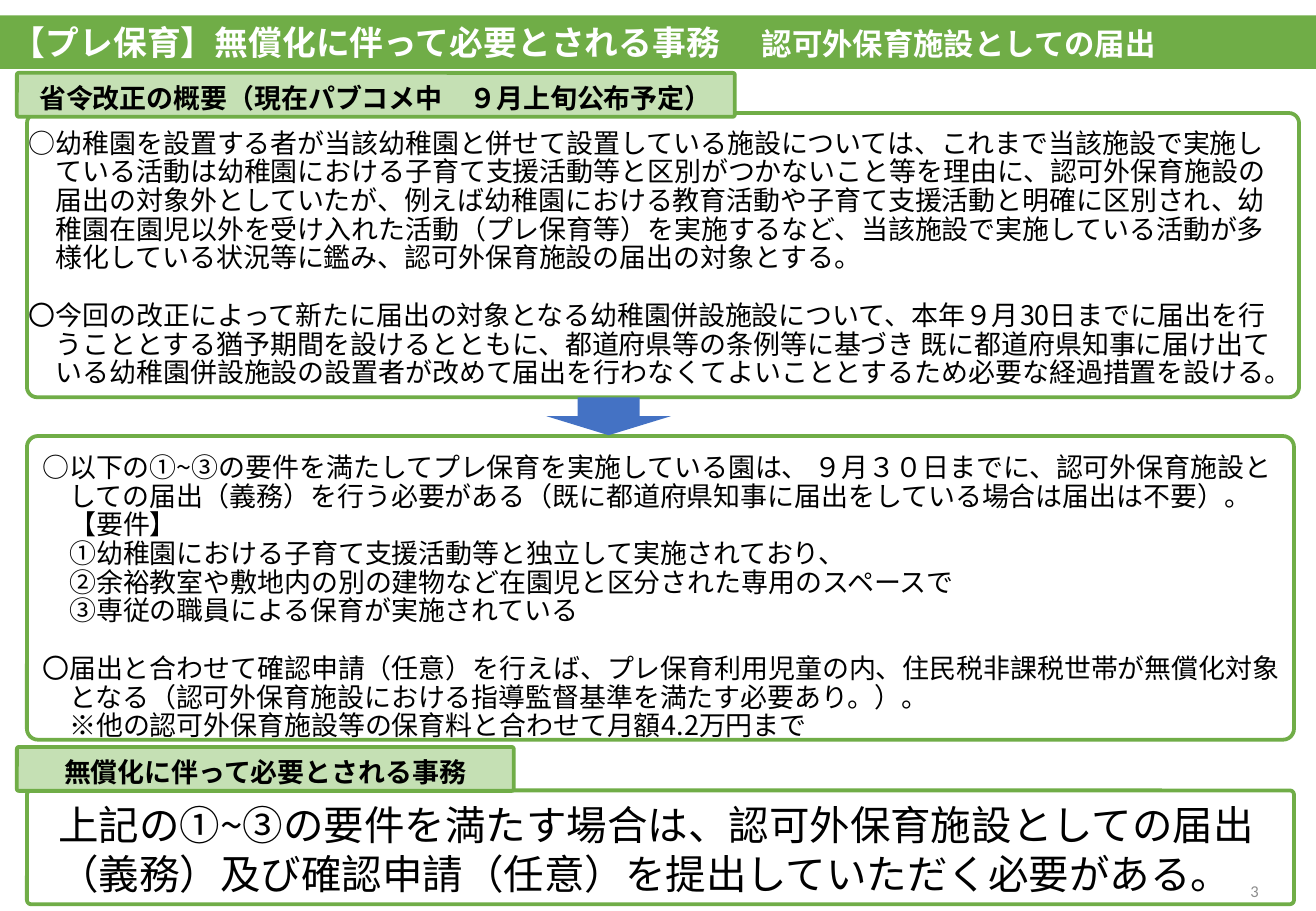
from lxml import etree
from pptx import Presentation
from pptx.dml.color import RGBColor
from pptx.enum.shapes import MSO_SHAPE
from pptx.enum.text import MSO_ANCHOR, PP_ALIGN
from pptx.oxml.ns import qn
from pptx.util import Pt

RECT, ROUND, ARROW = MSO_SHAPE.RECTANGLE, MSO_SHAPE.ROUNDED_RECTANGLE, MSO_SHAPE.DOWN_ARROW
TOP, MIDDLE = MSO_ANCHOR.TOP, MSO_ANCHOR.MIDDLE
LEFT, CENTER, RIGHT = PP_ALIGN.LEFT, PP_ALIGN.CENTER, PP_ALIGN.RIGHT

COLORS = {"green": "70AD47", "pale": "C5E0B4", "blue": "4472C4",
          "white": "FFFFFF", "black": "000000", "gray": "8C8C8C"}
FONT, NUMBER_FONT = "Noto Sans CJK JP", "Calibri"
BODY_SIZE, BODY_PITCH = 16, 17

# Content: each item is a list of lines
TITLE = [("【プレ保育】無償化に伴って必要とされる事務 　", 20), ("認可外保育施設としての届出", 18)]
REVISION = [
    ["○幼稚園を設置する者が当該幼稚園と併せて設置している施設については、これまで当該施設で実施し",
     "ている活動は幼稚園における子育て支援活動等と区別がつかないこと等を理由に、認可外保育施設の",
     "届出の対象外としていたが、例えば幼稚園における教育活動や子育て支援活動と明確に区別され、幼",
     "稚園在園児以外を受け入れた活動（プレ保育等）を実施するなど、当該施設で実施している活動が多",
     "様化している状況等に鑑み、認可外保育施設の届出の対象とする。"],
    ["〇今回の改正によって新たに届出の対象となる幼稚園併設施設について、本年９月30日までに届出を行",
     "うこととする猶予期間を設けるとともに、都道府県等の条例等に基づき 既に都道府県知事に届け出て",
     "いる幼稚園併設施設の設置者が改めて届出を行わなくてよいこととするため必要な経過措置を設ける。"],
]
REQUIREMENTS = [
    ["○以下の①~③の要件を満たしてプレ保育を実施している園は、 ９月３０日までに、認可外保育施設と",
     "しての届出（義務）を行う必要がある（既に都道府県知事に届出をしている場合は届出は不要）。",
     "【要件】",
     "①幼稚園における子育て支援活動等と独立して実施されており、",
     "②余裕教室や敷地内の別の建物など在園児と区分された専用のスペースで",
     "③専従の職員による保育が実施されている"],
    ["〇届出と合わせて確認申請（任意）を行えば、プレ保育利用児童の内、住民税非課税世帯が無償化対象",
     "となる（認可外保育施設における指導監督基準を満たす必要あり。）。",
     "※他の認可外保育施設等の保育料と合わせて月額4.2万円まで"],
]
CONCLUSION = "上記の①~③の要件を満たす場合は、認可外保育施設としての届出（義務）及び確認申請（任意）を提出していただく必要がある。"

# Places in points: left, top, width, height
REVISION_FRAME = (16, 67, 754, 168.5)
REQUIREMENTS_FRAME = (16, 258.5, 751, 180)
CONCLUSION_FRAME = (16, 468.5, 751, 67.5)
HEADINGS = [("省令改正の概要（現在パブコメ中　９月上旬公布予定）", (10, 43.2, 425.5, 26)),
            ("無償化に伴って必要とされる事務", (10, 442.8, 294.5, 26))]
BODIES = [(REVISION, (10, 73.5, 769, 196.5)), (REQUIREMENTS, (18, 265.7, 759, 179.3))]

prs = Presentation()
prs.slide_width, prs.slide_height = Pt(780), Pt(540)
s = prs.slides.add_slide(prs.slide_layouts[6])


def rgb(name):
    return RGBColor.from_string(COLORS[name])


def add_box(kind, place, fill=None, line=None, adj=None):
    sp = s.shapes.add_shape(kind, *map(Pt, place))
    sp.shadow.inherit = False
    if adj is not None:
        sp.adjustments[0] = adj
    if fill:
        sp.fill.solid()
        sp.fill.fore_color.rgb = rgb(fill)
    else:
        sp.fill.background()
    if line:
        sp.line.color.rgb = rgb(line)
        sp.line.width = Pt(2.25)
    else:
        sp.line.fill.background()
    return sp


def add_textbox(place):
    return s.shapes.add_textbox(*map(Pt, place))


def write(sp, text, size=BODY_SIZE, color="black", font=FONT, bold=False,
          align=LEFT, anchor=TOP, pitch=None, hanging=0):
    """Text is a string, (text, size) runs, or items made of lists of lines."""
    tf = sp.text_frame
    tf.word_wrap = True
    tf.vertical_anchor = anchor
    items = [[text]] if isinstance(text, str) else text
    for i, item in enumerate(items):
        p = tf.paragraphs[0] if i == 0 else tf.add_paragraph()
        p.alignment = align
        if pitch:
            p.line_spacing = Pt(pitch)
            p.space_before = Pt(pitch if i else 0)
        if hanging:
            pPr = p._p.get_or_add_pPr()
            pPr.set("marL", str(Pt(hanging)))
            pPr.set("indent", str(-Pt(hanging)))
        for j, part in enumerate(item):
            run_text, run_size = part if isinstance(part, tuple) else (part, size)
            if j and not isinstance(part, tuple):
                p.add_line_break()
            r = p.add_run()
            r.text = run_text
            r.font.size, r.font.bold = Pt(run_size), bold
            r.font.color.rgb = rgb(color)
            r.font.name = font
            etree.SubElement(r._r.get_or_add_rPr(), qn("a:ea")).set("typeface", font)


# Title bar
bar = add_box(RECT, (0, 9.2, 780, 31.7), fill="green")
write(bar, [TITLE], color="white", bold=True, anchor=MIDDLE)

# Frames and the arrow between the first two
for frame in (REVISION_FRAME, REQUIREMENTS_FRAME, CONCLUSION_FRAME):
    add_box(ROUND, frame, line="green", adj=0.036)
arrow_top = REVISION_FRAME[1] + REVISION_FRAME[3]
add_box(ARROW, (324, arrow_top, 73.5, 22.5), fill="blue")

# Section headings
for heading, place in HEADINGS:
    sp = add_box(ROUND, place, fill="pale", line="green", adj=0.042)
    sp.text_frame.margin_top = Pt(7.2)
    write(sp, heading, bold=True, align=CENTER, anchor=MIDDLE)

# Body text
for items, place in BODIES:
    write(add_textbox(place), items, pitch=BODY_PITCH, hanging=BODY_SIZE)
write(add_textbox((27.4, 470.9, 740, 65.5)), CONCLUSION, size=24)

# Page number
write(add_textbox((577.5, 513.4, 175.7, 28.8)), "3", size=9.8, color="gray",
      font=NUMBER_FONT, align=RIGHT, anchor=MIDDLE)

prs.save("out.pptx")
